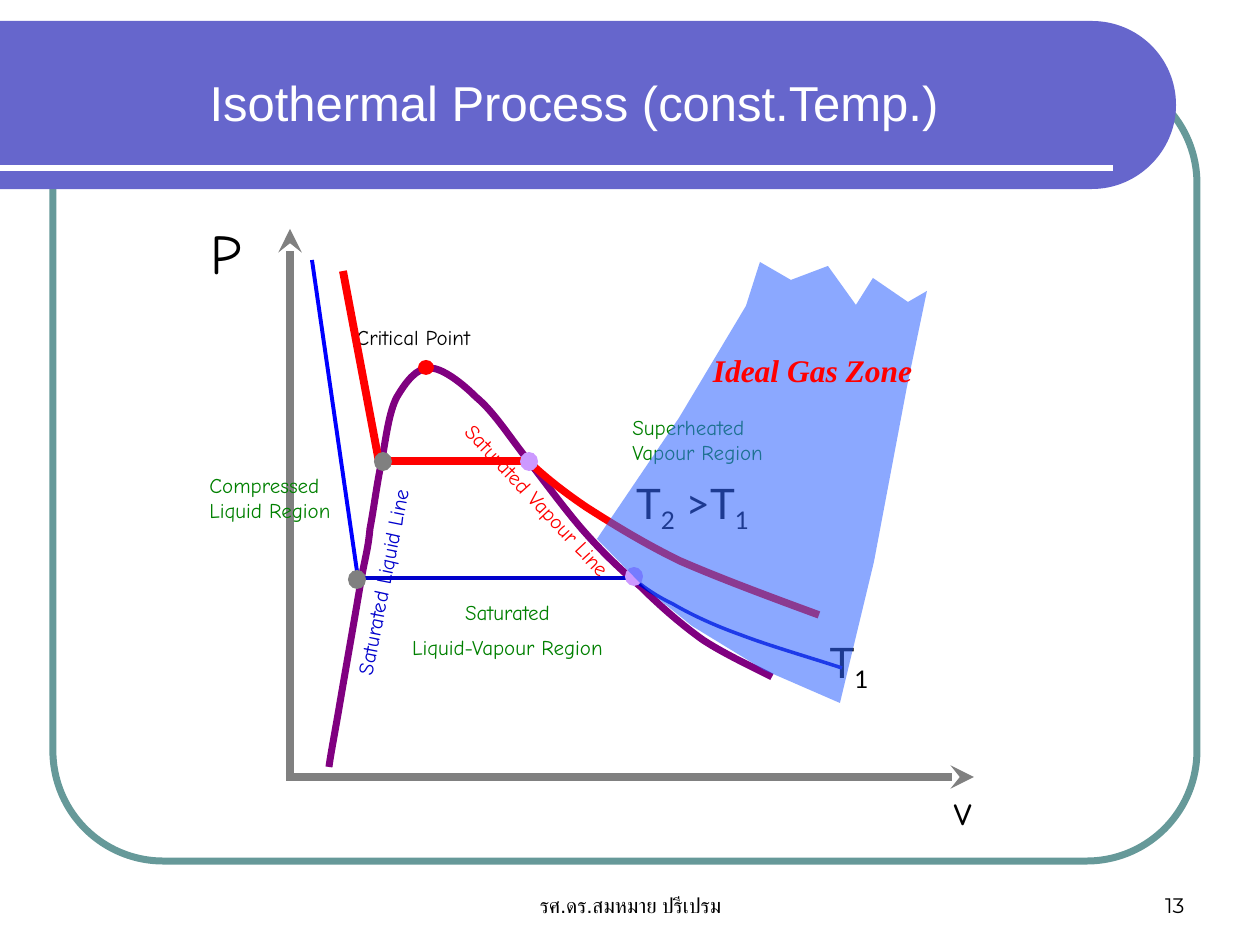
"""Build the isothermal process slide with its P-v diagram."""
from dataclasses import dataclass

from lxml.etree import SubElement
from pptx import Presentation
from pptx.dml.color import RGBColor
from pptx.enum.shapes import MSO_CONNECTOR as Connector, MSO_SHAPE as Preset
from pptx.enum.text import MSO_ANCHOR as Anchor, PP_ALIGN as Align
from pptx.oxml.ns import qn
from pptx.util import Inches, Pt

PX = 914400 / 126


@dataclass(frozen=True)
class Theme:
    white: str = "FFFFFF"
    black: str = "000000"
    banner: str = "6666CC"
    frame: str = "669999"
    grey: str = "808080"
    dome: str = "800080"
    blue: str = "0000FF"
    navy: str = "0000CC"
    red: str = "FF0000"
    green: str = "008000"
    lilac: str = "CC99FF"
    gas: str = "3366FF"
    sans: str = "Arial"
    hand: str = "Comic Neue"
    symbol: str = "Lato"
    number: str = "Montserrat"
    serif: str = "Times New Roman"
    small: int = 12
    zone: int = 18
    large: int = 24
    title: int = 28
    axis: int = 32


T = Theme()
TITLE = ("Isothermal Process (const.Temp.)", (197, 66, 775, 72))
FRAME = (53, 73, 1144, 788)
BANNER = [(0, 21), (1092, 21), (1138, 21, 1176, 58, 1176, 105),
          (1176, 151, 1138, 189, 1092, 189), (0, 189)]
DOME = [(329, 767), (331, 753, 334, 738, 339, 709), (344, 679, 355, 617, 360, 587),
        (365, 557, 368, 551, 370, 529), (374, 508, 377, 483, 382, 460),
        (386, 438, 389, 412, 397, 397), (406, 382, 416, 368, 430, 368),
        (442, 368, 461, 382, 476, 397), (493, 411, 507, 433, 524, 455),
        (542, 478, 563, 507, 582, 529), (602, 552, 621, 570, 641, 587),
        (660, 606, 682, 625, 703, 640), (726, 655, 757, 669, 772, 677)]
T1_VAPOUR = [(630, 577), (643, 586, 654, 595, 673, 604),
             (690, 614, 713, 625, 741, 635), (770, 646, 805, 656, 842, 668)]
T2_VAPOUR = [(528, 461), (544, 476, 561, 490, 586, 507),
             (611, 523, 643, 543, 680, 561), (719, 578, 770, 597, 819, 615)]
GAS_ZONE = [(927, 291), (907, 387), (874, 562), (840, 703), (764, 670), (692, 626),
            (645, 588), (597, 539), (679, 418), (746, 306), (760, 262), (791, 280),
            (828, 266), (856, 305), (873, 278), (908, 302)]
AXES = [(290, 777, 290, 229), (286, 777, 974, 777)]
T1_LINES = [((312, 260, 358, 578), T.blue), ((358, 578, 641, 578), T.navy)]
T2_LINES = [(379, 461, 534, 461), (343, 271, 379, 462)]
T1_DOTS = [((348, 570, 18, 19), T.grey), ((418, 360, 16, 15), T.red),
           ((625, 567, 18, 19), T.lilac)]
T2_DOTS = [((520, 452, 18, 19), T.lilac), ((374, 452, 18, 19), T.grey)]
FOOTERS = [
    ("รศ.ดร.สมหมาย ปรีเปรม", (431, 861, 399, 63), T.sans, Align.CENTER),
    ("13", (903, 861, 294, 63), T.number, Align.RIGHT),
]
SYMBOLS = [
    ("P", (170, 212, 113, 59), T.hand, T.axis),
    ("v", (893, 777, 141, 59), T.hand, T.large),
    ("T|1", (805, 630, 88, 71), T.symbol, T.large),
    ("T|2| >T|1", (620, 471, 145, 71), T.symbol, T.large),
]
REGIONS = [
    ("Critical Point", (344, 318, 159, 38), T.black, Align.LEFT, 0),
    ("Superheated Vapour Region", (620, 408, 159, 88), T.green, Align.LEFT, 0),
    ("Saturated\nLiquid-Vapour Region", (370, 593, 275, 76), T.green, Align.CENTER, 0),
    ("Compressed Liquid Region", (197, 466, 159, 63), T.green, Align.LEFT, 0),
    ("Saturated Liquid Line", (266, 551, 238, 38), T.navy, Align.LEFT, 281.1),
    ("Saturated Vapour Line", (418, 499, 272, 38), T.red, Align.LEFT, 46.8),
]
ZONE_LABEL = ("Ideal Gas Zone", (697, 345, 231, 50))


def emu(lengths):
    return [round(length * PX) for length in lengths]


def paint(shape, fill=None, line=None, width=1):
    shape.shadow.inherit = False
    for part, color in ((shape.fill, fill), (shape.line.fill, line)):
        if color:
            part.solid()
            part.fore_color.rgb = RGBColor.from_string(color)
        else:
            part.background()
    if line:
        shape.line.width = Pt(width)
    return shape


def outline(page, segments, closed=False, **style):
    """Draw two-number segments as lines and six-number segments as curves."""
    start, *rest = segments
    points = [pair for part in rest for pair in zip(part[::2], part[1::2])]
    builder = page.shapes.build_freeform(*start, scale=PX)
    builder.add_line_segments(points, close=closed)
    shape = paint(builder.convert_to_shape(), **style)
    steps = iter(list(shape.element.iter(qn("a:lnTo"))))
    for part in rest:
        group = [next(steps) for _ in range(len(part) // 2)]
        if len(group) == 3:
            curve = SubElement(group[0].getparent(), qn("a:cubicBezTo"))
            group[0].addprevious(curve)
            for step in group:
                curve.append(step[0])
                step.getparent().remove(step)
    return shape


def straight(page, ends, color, width, arrow=False):
    line = page.shapes.add_connector(Connector.STRAIGHT, *emu(ends))
    line.line.color.rgb = RGBColor.from_string(color)
    line.line.width = Pt(width)
    if arrow:
        SubElement(line.line._get_or_add_ln(), qn("a:tailEnd"), type="stealth")
    SubElement(line.element.spPr, qn("a:effectLst"))


def dots(page, items):
    for at, color in items:
        paint(page.shapes.add_shape(Preset.OVAL, *emu(at)), fill=color)


def write(box, text, font, size, color, align=Align.CENTER, anchor=Anchor.TOP):
    frame = box.text_frame
    frame.word_wrap = True
    frame.vertical_anchor = anchor
    for index, row in enumerate(text.split("\n")):
        para = frame.add_paragraph() if index else frame.paragraphs[0]
        para.alignment = align
        para.space_before = Pt(size / 2 if index else 0)
        para.font.name, para.font.size = font, Pt(size)
        para.font.color.rgb = RGBColor.from_string(color)
        for place, piece in enumerate(row.split("|")):
            span = para.add_run()
            span.text = piece
            if place % 2:
                span.font._element.set("baseline", "-25000")
    return box


def label(page, text, at, *style, **more):
    return write(page.shapes.add_textbox(*emu(at)), text, *style, **more)


def main():
    deck = Presentation()
    deck.slide_width, deck.slide_height = Inches(10), Inches(7.5)
    page = deck.slides.add_slide(deck.slide_layouts[5])

    frame = page.shapes.add_shape(Preset.ROUNDED_RECTANGLE, *emu(FRAME))
    frame.adjustments[0] = 0.14
    paint(frame, line=T.frame, width=4)
    outline(page, BANNER, closed=True, fill=T.banner)
    straight(page, (0, 168, 1113, 168), T.white, 3)
    for text, at, font, align in FOOTERS:
        label(page, text, at, font, T.small, T.black, align=align, anchor=Anchor.BOTTOM)

    outline(page, DOME, line=T.dome, width=4)
    for ends in AXES:
        straight(page, ends, T.grey, 4.5, arrow=True)
    for ends, color in T1_LINES:
        straight(page, ends, color, 2.25)
    for text, at, font, size in SYMBOLS:
        label(page, text, at, font, size, T.black)
    for text, at, color, align, turn in REGIONS:
        label(page, text, at, T.hand, T.small, color, align=align).rotation = turn
    outline(page, T1_VAPOUR, line=T.navy, width=2)
    dots(page, T1_DOTS)

    title = page.shapes.title
    title.left, title.top, title.width, title.height = emu(TITLE[1])
    write(title, TITLE[0], T.sans, T.title, T.white, align=Align.LEFT)
    title.element.getparent().append(title.element)

    for ends in T2_LINES:
        straight(page, ends, T.red, 4.5)
    outline(page, T2_VAPOUR, line=T.red, width=4.25)
    dots(page, T2_DOTS)
    zone = outline(page, GAS_ZONE, closed=True, fill=T.gas)
    tint = next(zone.element.spPr.iter(qn("a:srgbClr")))
    SubElement(tint, qn("a:alpha"), val="57000")
    box = label(page, *ZONE_LABEL, T.serif, T.zone, T.red)
    font = box.text_frame.paragraphs[0].font
    font.bold = font.italic = True
    deck.save("out.pptx")


if __name__ == "__main__":
    main()
